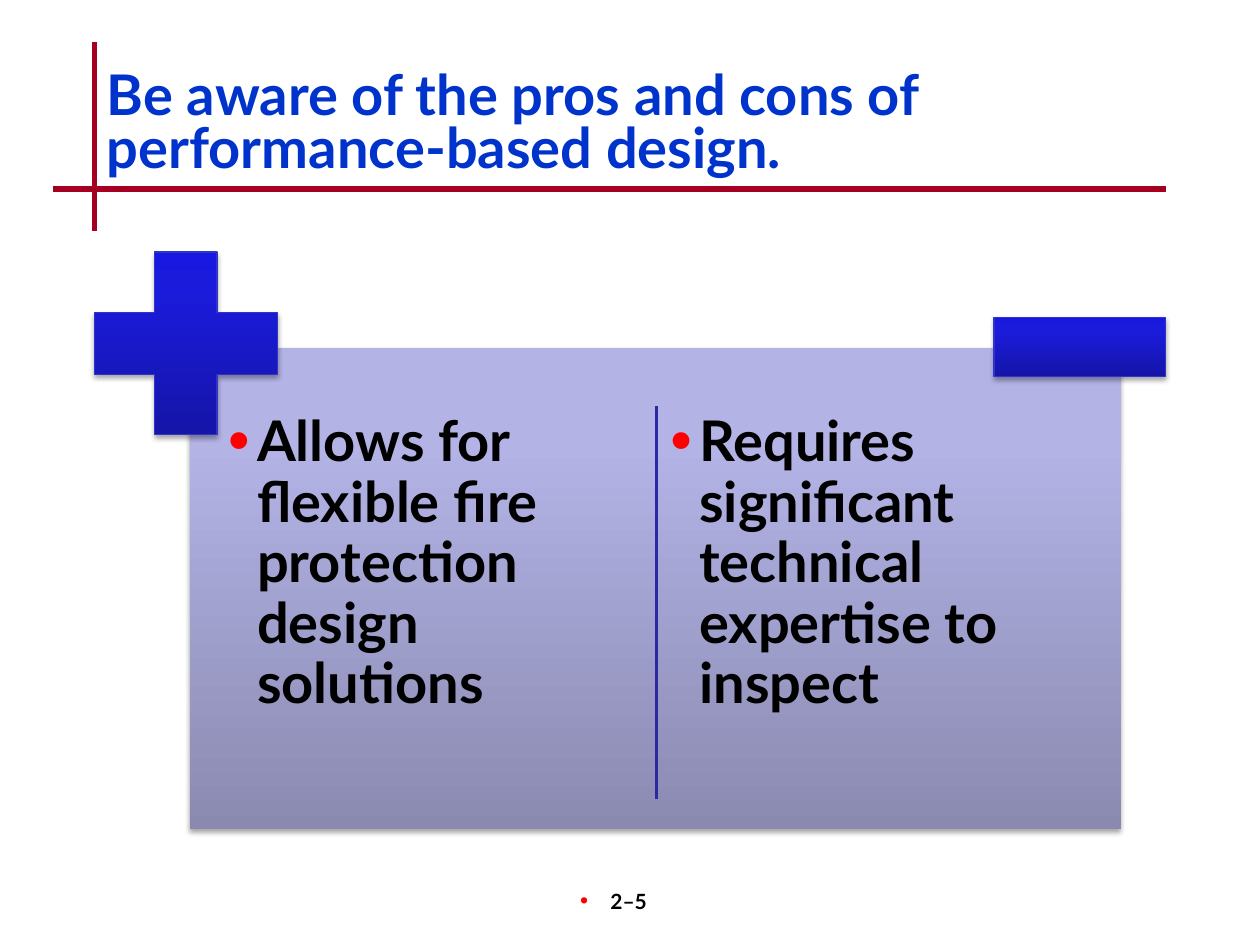
from lxml.etree import SubElement
from pptx import Presentation
from pptx.dml.color import RGBColor
from pptx.enum.shapes import MSO_CONNECTOR as Connector, MSO_SHAPE as Shape
from pptx.enum.text import MSO_ANCHOR as Anchor, PP_ALIGN as Align
from pptx.oxml import parse_xml
from pptx.oxml.ns import nsdecls, qn
from pptx.util import Inches, Pt

FONT = "Lato"
BLACK = RGBColor(0x00, 0x00, 0x00)
TITLE_BLUE = RGBColor(0x00, 0x33, 0xCC)
RULE_RED = RGBColor(0xA5, 0x00, 0x21)
BULLET_RED = RGBColor(0xFF, 0x00, 0x00)
SIGN_EDGE = RGBColor(0x33, 0x33, 0xCC)
DIVIDER_BLUE = RGBColor(0x29, 0x29, 0xA3)
PANEL_SHADES = [
    (0, RGBColor(0x8A, 0x8A, 0xB1)),
    (80, RGBColor(0xB3, 0xB3, 0xE6)),
    (100, RGBColor(0xB3, 0xB3, 0xE8)),
]
SIGN_SHADES = [
    (0, RGBColor(0x15, 0x15, 0xA9)),
    (80, RGBColor(0x1B, 0x1B, 0xDC)),
    (100, RGBColor(0x18, 0x18, 0xE1)),
]
PROS = "Allows for flexible fire protection design solutions"
CONS = "Requires significant technical expertise to inspect"


def add_line(page, start, end, color, width):
    """Draw a straight line without a shadow."""
    line = page.shapes.add_connector(
        Connector.STRAIGHT, *map(Inches, start), *map(Inches, end)
    )
    line.line.color.rgb = color
    line.line.width = Pt(width)
    SubElement(line._element.spPr, qn("a:effectLst"))


def add_block(page, kind, place, shades, edge=None):
    """Add a shape with a vertical gradient and a soft shadow below it."""
    block = page.shapes.add_shape(kind, *map(Inches, place))
    if edge is None:
        block.line.fill.background()
    else:
        block.line.color.rgb = edge
        block.line.width = Pt(0.75)
    stops = "".join(
        f'<a:gs pos="{position * 1000}"><a:srgbClr val="{color}"/></a:gs>'
        for position, color in shades
    )
    gradient = parse_xml(
        f'<a:gradFill {nsdecls("a")} rotWithShape="1"><a:gsLst>{stops}</a:gsLst>'
        '<a:lin ang="16200000" scaled="0"/></a:gradFill>'
    )
    shadow = parse_xml(
        f'<a:effectLst {nsdecls("a")}><a:outerShdw blurRad="{Pt(3.1)}" '
        f'dist="{Pt(1.8)}" dir="5400000" rotWithShape="0"><a:srgbClr val="{BLACK}">'
        '<a:alpha val="35000"/></a:srgbClr></a:outerShdw></a:effectLst>'
    )
    properties = block._element.spPr
    properties.find(qn("a:prstGeom")).addnext(gradient)
    properties.append(shadow)
    return block


def add_text(page, place, text, size, color=BLACK, spacing=1.0):
    """Add a wrapped box with one bold paragraph."""
    box = page.shapes.add_textbox(*map(Inches, place))
    frame = box.text_frame
    frame.word_wrap = True
    frame.text = text
    para = frame.paragraphs[0]
    para.line_spacing = spacing
    font = para.runs[0].font
    font.name, font.size, font.bold = FONT, Pt(size), True
    font.color.rgb = color
    return frame


def set_bullet(para, hang):
    """Give the paragraph a hanging red bullet."""
    properties = para._p.get_or_add_pPr()
    properties.set("marL", str(Inches(hang)))
    properties.set("indent", str(-Inches(hang)))
    color = SubElement(properties, qn("a:buClr"))
    SubElement(color, qn("a:srgbClr"), val=str(BULLET_RED))
    SubElement(properties, qn("a:buSzPct"), val="110000")
    SubElement(properties, qn("a:buFont"), typeface="Arial")
    SubElement(properties, qn("a:buChar"), char="•")


def add_column(page, left, text):
    """Add one bulleted column of the panel."""
    frame = add_text(page, (left, 3.21, 3.43, 3.27), text, 32, spacing=0.9)
    frame.margin_left = frame.margin_right = Inches(0.07)
    frame.margin_top = frame.margin_bottom = Inches(0.07)
    set_bullet(frame.paragraphs[0], 0.23)


def add_page_number(page):
    """Add the centred page number with its bullet."""
    frame = add_text(page, (3.92, 7, 2.08, 0.5), "2–5", 12)
    frame.margin_right = Inches(0.28)
    para = frame.paragraphs[0]
    para.alignment = Align.CENTER
    set_bullet(para, 0.24)


def main():
    """Build the slide and save it."""
    deck = Presentation()
    deck.slide_width, deck.slide_height = Inches(10), Inches(7.5)
    page = deck.slides.add_slide(deck.slide_layouts[6])

    add_line(page, (0.75, 0.33), (0.75, 1.83), RULE_RED, 3)
    add_line(page, (0.42, 1.5), (9.25, 1.5), RULE_RED, 3)
    add_page_number(page)
    title = add_text(
        page, (0.75, 0.5, 8.5, 1),
        "Be aware of the pros and cons of performance-based design.",
        32, TITLE_BLUE, 0.8,
    )
    title.vertical_anchor = Anchor.MIDDLE

    add_block(page, Shape.RECTANGLE, (1.51, 2.76, 7.39, 3.82), PANEL_SHADES)
    add_column(page, 1.74, PROS)
    add_column(page, 5.25, CONS)
    plus = add_block(page, Shape.CROSS, (0.75, 2, 1.45, 1.45), SIGN_SHADES, SIGN_EDGE)
    plus.adjustments[0] = 0.33
    add_block(page, Shape.RECTANGLE, (7.89, 2.52, 1.36, 0.47), SIGN_SHADES, SIGN_EDGE)
    add_line(page, (5.21, 3.22), (5.21, 6.34), DIVIDER_BLUE, 2)

    deck.save("out.pptx")


if __name__ == "__main__":
    main()
